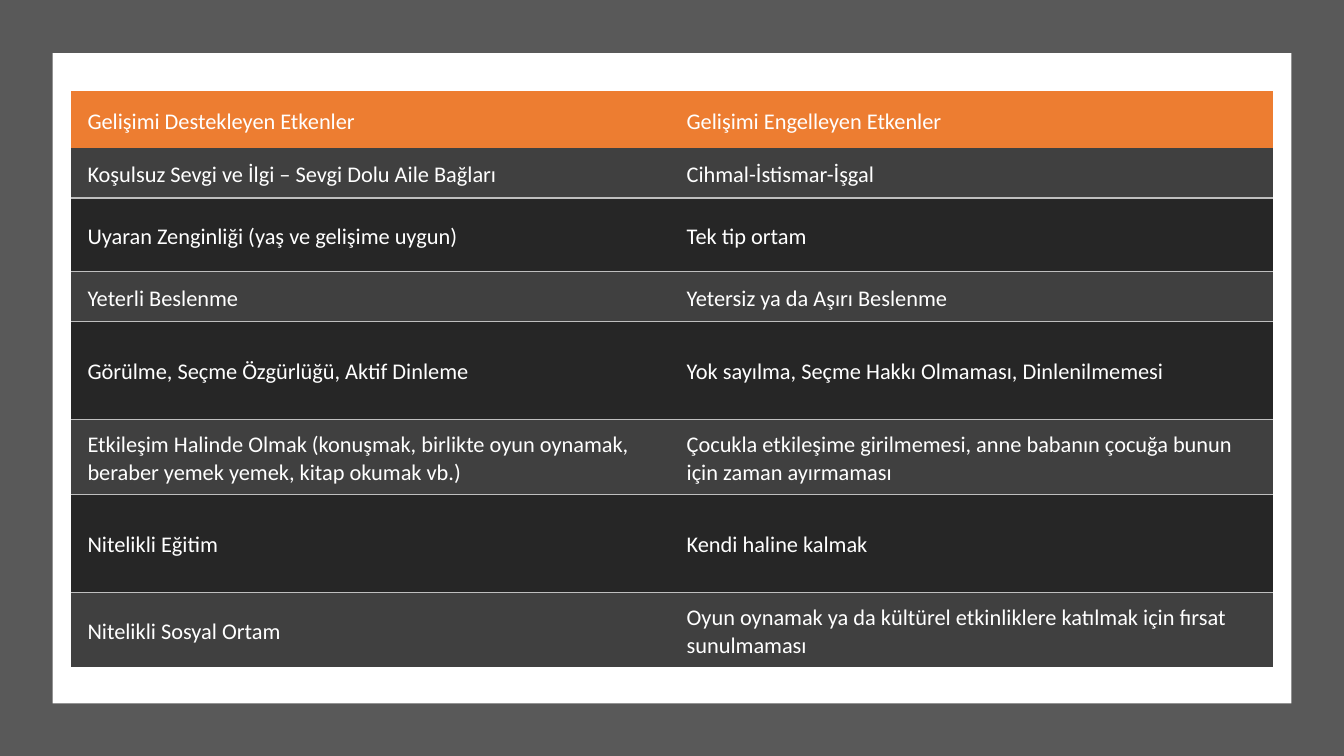
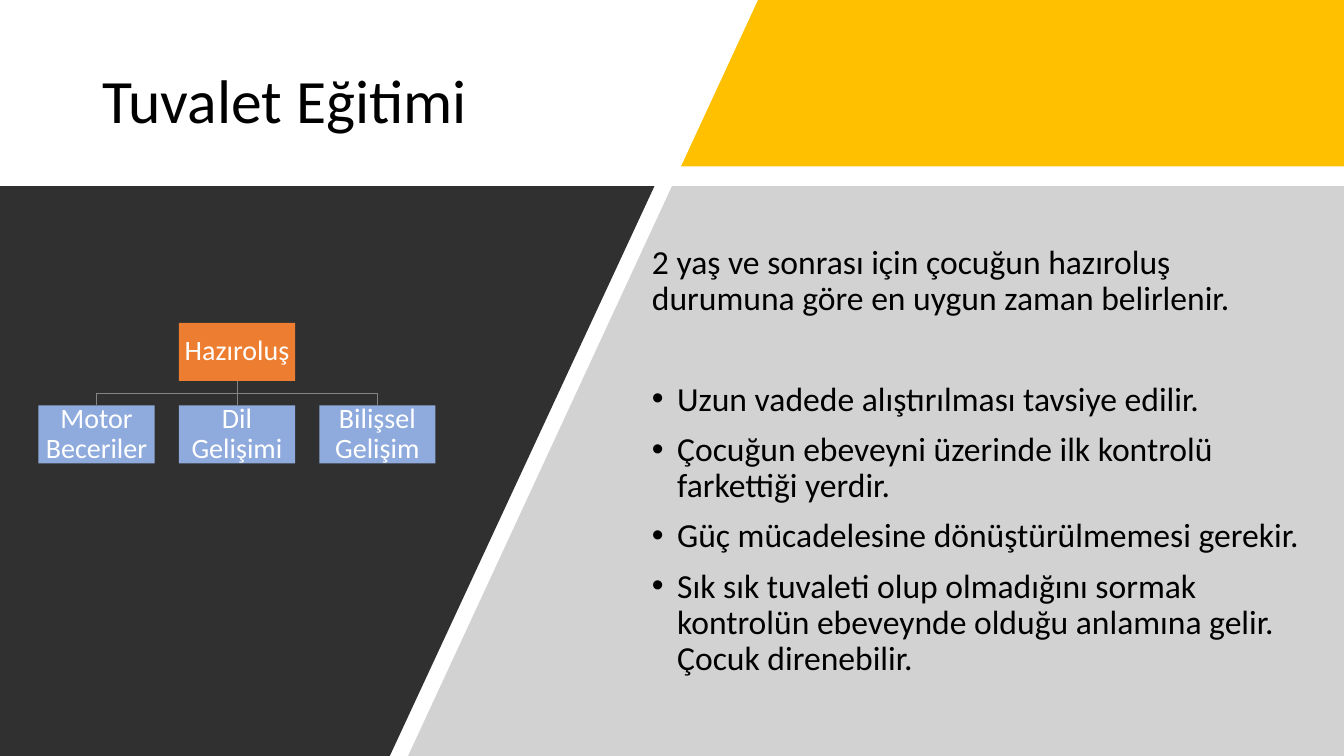
"""Build two slides on child development: a comparison table and toilet training."""
import pptx
import pptx.dml.color
import pptx.enum.shapes
import pptx.enum.text
import pptx.oxml
import pptx.oxml.ns
import pptx.util

Pt = pptx.util.Pt
ALIGN = pptx.enum.text.PP_ALIGN
MIDDLE = pptx.enum.text.MSO_ANCHOR.MIDDLE
TOP = pptx.enum.text.MSO_ANCHOR.TOP
FONT = "Calibri"
WIDTH, HEIGHT = 960, 540

COLOURS = {
    "white": "FFFFFF", "black": "000000", "frame": "595959",
    "orange": "ED7D31", "yellow": "FFC000", "blue": "8FAADC",
    "charcoal": "303030", "grey": "A6A6A6", "line": "848484",
    "row_light": "404040", "row_dark": "262626", "rule": "BFBFBF",
}

TABLE_ROWS = [
    (41, "Gelişimi Destekleyen Etkenler", "Gelişimi Engelleyen Etkenler"),
    (35.4, "Koşulsuz Sevgi ve İlgi – Sevgi Dolu Aile Bağları", "Cihmal-İstismar-İşgal"),
    (52.8, "Uyaran Zenginliği (yaş ve gelişime uygun)", "Tek tip ortam"),
    (35.4, "Yeterli Beslenme", "Yetersiz ya da Aşırı Beslenme"),
    (70, "Görülme, Seçme Özgürlüğü, Aktif Dinleme",
     "Yok sayılma, Seçme Hakkı Olmaması, Dinlenilmemesi"),
    (52.8, "Etkileşim Halinde Olmak (konuşmak, birlikte oyun oynamak, "
     "beraber yemek yemek, kitap okumak vb.)",
     "Çocukla etkileşime girilmemesi, anne babanın çocuğa bunun için zaman ayırmaması"),
    (70, "Nitelikli Eğitim", "Kendi haline kalmak"),
    (52.8, "Nitelikli Sosyal Ortam",
     "Oyun oynamak ya da kültürel etkinliklere katılmak için fırsat sunulmaması"),
]
TABLE_LEFT, TABLE_TOP = 50.5, 65
COLUMN_WIDTHS = [428, 431]
CELL_FORMAT = {
    "margin_left": Pt(12), "margin_top": Pt(8.6), "margin_right": Pt(12),
    "margin_bottom": Pt(5.8), "vertical_anchor": MIDDLE,
}
NO_TABLE_STYLE = "{2D5ABB26-0587-4C30-8999-92F81FD0307C}"

TITLE = "Tuvalet Eğitimi"
INTRO = "2 yaş ve sonrası için çocuğun hazıroluş durumuna göre en uygun zaman belirlenir."
BULLETS = [
    "Uzun vadede alıştırılması tavsiye edilir.",
    "Çocuğun ebeveyni üzerinde ilk kontrolü farkettiği yerdir.",
    "Güç mücadelesine dönüştürülmemesi gerekir.",
    "Sık sık tuvaleti olup olmadığını sormak kontrolün ebeveynde olduğu "
    "anlamına gelir. Çocuk direnebilir.",
]
BANDS = [
    ("yellow", None, [(541.5, 0), (WIDTH, 0), (WIDTH, 118.8), (486.5, 118.8)]),
    ("grey", 50, [(480, 133), (WIDTH, 133), (WIDTH, HEIGHT), (291.5, HEIGHT)]),
    ("charcoal", None, [(0, 133), (467.5, 133), (278.5, HEIGHT), (0, HEIGHT)]),
]
READINESS = "Hazıroluş"
SKILLS = ["Motor Beceriler", "Dil Gelişimi", "Bilişsel Gelişim"]
NODE_WIDTH, NODE_HEIGHT = 83, 41.5
NODE_LEFT, NODE_PITCH = 27.5, 100.3
PARENT_TOP, CHILD_TOP = 230.6, 289.5


def apply(target, values):
    for name, value in values.items():
        setattr(target, name, value)


def rgb(name):
    return pptx.dml.color.RGBColor.from_string(COLOURS[name])


def paint(target, colour):
    target.fill.solid()
    target.fill.fore_color.rgb = rgb(colour)


def style_font(font, size, colour):
    apply(font, {"name": FONT, "size": Pt(size), "bold": False})
    font.color.rgb = rgb(colour)


def add_xml(parent, markup, index=None):
    tag, rest = markup.split(" ", 1)
    element = pptx.oxml.parse_xml(f"<{tag} {pptx.oxml.ns.nsdecls('a')} {rest}")
    parent.insert(len(parent) if index is None else index, element)


def finish_shape(shape, colour):
    shape.shadow.inherit = False
    paint(shape, colour)
    shape.line.fill.background()
    return shape


def add_panel(page, left, top, width, height, colour):
    kind = pptx.enum.shapes.MSO_SHAPE.RECTANGLE
    shape = page.shapes.add_shape(kind, Pt(left), Pt(top), Pt(width), Pt(height))
    return finish_shape(shape, colour)


def add_band(page, colour, opacity, corners):
    points = [(Pt(x), Pt(y)) for x, y in corners]
    builder = page.shapes.build_freeform(*points[0])
    builder.add_line_segments(points[1:], close=True)
    band = finish_shape(builder.convert_to_shape(), colour)
    if opacity:
        tint = next(band.element.spPr.iter(pptx.oxml.ns.qn("a:srgbClr")))
        add_xml(tint, f'a:alpha val="{opacity * 1000}"/>')
    page.shapes._spTree.insert(2, band.element)


def add_line(page, x1, y1, x2, y2):
    kind = pptx.enum.shapes.MSO_CONNECTOR.STRAIGHT
    line = page.shapes.add_connector(kind, Pt(x1), Pt(y1), Pt(x2), Pt(y2))
    line.line.width = Pt(0.5)
    line.line.color.rgb = rgb("line")
    add_xml(line.element.spPr, "a:effectLst />")


def add_node(page, left, top, text, colour):
    box = add_panel(page, left, top, NODE_WIDTH, NODE_HEIGHT, colour)
    frame = box.text_frame
    margins = dict.fromkeys(
        ["margin_left", "margin_top", "margin_right", "margin_bottom"], Pt(0.7))
    apply(frame, {**margins, "word_wrap": True, "vertical_anchor": MIDDLE})
    para = frame.paragraphs[0]
    apply(para, {"text": text, "alignment": ALIGN.CENTER, "line_spacing": 0.9})
    style_font(para.font, 20, "white")


def place_text(box, place, anchor, entries, size):
    left, top, width, height = (Pt(value) for value in place)
    apply(box, {"left": left, "top": top, "width": width, "height": height})
    frame = box.text_frame
    apply(frame, {"word_wrap": True, "vertical_anchor": anchor,
                  "auto_size": pptx.enum.text.MSO_AUTO_SIZE.NONE})
    for number, (text, before, bulleted) in enumerate(entries):
        para = frame.add_paragraph() if number else frame.paragraphs[0]
        apply(para, {"text": text, "alignment": ALIGN.LEFT,
                     "line_spacing": 0.9, "space_before": Pt(before)})
        properties = para._p.get_or_add_pPr()
        indent = Pt(18) if bulleted else 0
        properties.set("marL", str(indent))
        properties.set("indent", str(-indent))
        add_xml(properties, 'a:buChar char="•"/>' if bulleted else "a:buNone />")
        style_font(para.font, size, "black")


def add_rule(cell, side):
    markup = (f'a:{side} w="12700"><a:solidFill><a:srgbClr val="{COLOURS["rule"]}"/>'
              f"</a:solidFill></a:{side}>")
    add_xml(cell._tc.get_or_add_tcPr(), markup, 0)


def build_factors(deck):
    page = deck.slides.add_slide(deck.slide_layouts[6])
    add_panel(page, 0, 0, WIDTH, HEIGHT, "frame")
    add_panel(page, 37.5, 38, 885, 464.5, "white")
    table_height = sum(row[0] for row in TABLE_ROWS)
    holder = page.shapes.add_table(
        len(TABLE_ROWS), len(COLUMN_WIDTHS), Pt(TABLE_LEFT), Pt(TABLE_TOP),
        Pt(sum(COLUMN_WIDTHS)), Pt(table_height))
    table = holder.table
    next(table._tbl.iter(pptx.oxml.ns.qn("a:tableStyleId"))).text = NO_TABLE_STYLE
    for column, width in zip(table.columns, COLUMN_WIDTHS):
        column.width = Pt(width)
    for number, (height, *texts) in enumerate(TABLE_ROWS):
        table.rows[number].height = Pt(height)
        light = number % 2 == 1
        colour = "row_light" if light else "row_dark"
        for cell, text in zip(table.rows[number].cells, texts):
            apply(cell, {**CELL_FORMAT, "text": text})
            paint(cell, colour if number else "orange")
            style_font(cell.text_frame.paragraphs[0].font, 16, "white")
            if number and number < len(TABLE_ROWS) - 1:
                add_rule(cell, "lnB" if light else "lnT")


def build_training(deck):
    page = deck.slides.add_slide(deck.slide_layouts[1])
    for band in BANDS:
        add_band(page, *band)
    place_text(page.shapes.title, (66, 28.8, 420.5, 90), MIDDLE, [(TITLE, 0, False)], 44)
    entries = [(INTRO, 0, False)]
    entries += [(text, 10 if number else 46, True) for number, text in enumerate(BULLETS)]
    place_text(page.placeholders[1], (458.5, 171.5, 478, 318), TOP, entries, 24)

    lefts = [NODE_LEFT + NODE_PITCH * number for number in range(len(SKILLS))]
    centres = [left + NODE_WIDTH / 2 for left in lefts]
    parent_bottom = PARENT_TOP + NODE_HEIGHT
    bar = (parent_bottom + CHILD_TOP) / 2
    add_line(page, centres[1], parent_bottom, centres[1], bar)
    add_line(page, centres[0], bar, centres[-1], bar)
    for centre in centres:
        add_line(page, centre, bar, centre, CHILD_TOP)
    add_node(page, lefts[1], PARENT_TOP, READINESS, "orange")
    for left, skill in zip(lefts, SKILLS):
        add_node(page, left, CHILD_TOP, skill, "blue")


def main():
    deck = pptx.Presentation()
    apply(deck, {"slide_width": Pt(WIDTH), "slide_height": Pt(HEIGHT)})
    build_factors(deck)
    build_training(deck)
    deck.save("out.pptx")


if __name__ == "__main__":
    main()
